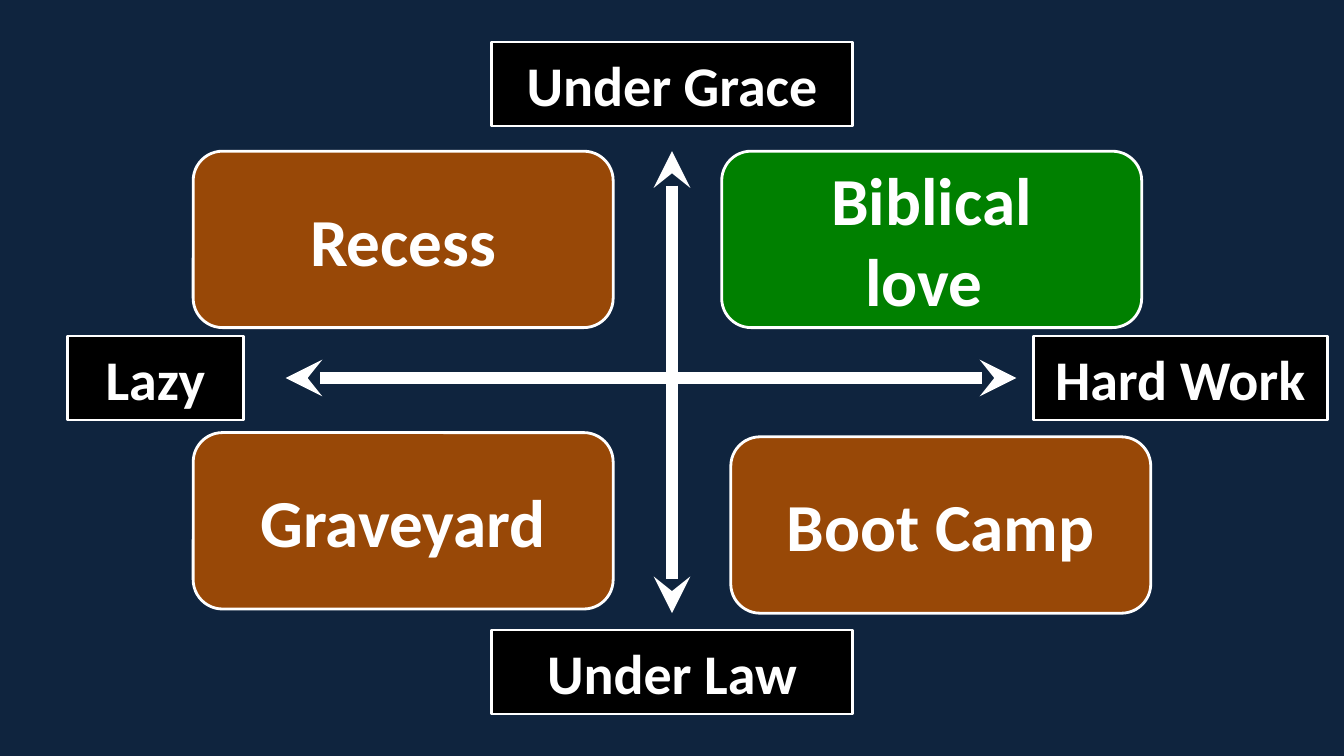
"""Build a four-quadrant slide crossing grace and law with laziness and hard work."""
from lxml import etree
from pptx import Presentation
from pptx import util as u
from pptx.dml import color
from pptx.enum import shapes, text
from pptx.oxml import ns

NAVY = color.RGBColor(0x0F, 0x24, 0x3E)
BLACK = color.RGBColor(0x00, 0x00, 0x00)
WHITE = color.RGBColor(0xFF, 0xFF, 0xFF)
BROWN = color.RGBColor(0x98, 0x48, 0x07)
GREEN = color.RGBColor(0x00, 0x80, 0x00)

LABEL_HEIGHT = 60
QUADRANT_WIDTH, QUADRANT_HEIGHT = 300, 126
CENTRE_X, CENTRE_Y = 480, 270
FONT_FORMAT = {"name": "Calibri", "bold": True}

LABELS = [
    ("Under Grace", 351, 30, 258),
    ("Under Law", 351, 450, 258),
    ("Lazy", 48, 240, 126),
    ("Hard Work", 738, 240, 210),
]
AXES = [
    (204, CENTRE_Y, 726, CENTRE_Y),
    (CENTRE_X, 108, CENTRE_X, 438),
]
QUADRANTS = [
    (["Boot Camp"], 522, 312, BROWN),
    (["Recess"], 138, 108, BROWN),
    (["Graveyard"], 138, 309, BROWN),
    (["Biblical", "love "], 515.5, 108, GREEN),
]


def apply_format(target, values):
    """Set each named attribute on the target."""
    for name, value in values.items():
        setattr(target, name, value)


def add_box(page, kind, frame, fill, lines, size):
    """Add an outlined box with centred bold text, one paragraph per line."""
    box = page.shapes.add_shape(kind, *map(u.Pt, frame))
    box.shadow.inherit = False
    box.fill.solid()
    box.fill.fore_color.rgb = fill
    box.line.color.rgb = WHITE
    box.line.width = u.Pt(2)
    apply_format(box.text_frame, {
        "word_wrap": True,
        "vertical_anchor": text.MSO_ANCHOR.MIDDLE,
    })
    for index, line in enumerate(lines):
        para = box.text_frame.paragraphs[0] if index == 0 else box.text_frame.add_paragraph()
        para.alignment = text.PP_ALIGN.CENTER
        span = para.add_run()
        span.text = line
        apply_format(span.font, {**FONT_FORMAT, "size": u.Pt(size)})
        span.font.color.rgb = WHITE


def add_label(page, caption, left, top, width):
    """Add a black label naming one end of an axis."""
    frame = (left, top, width, LABEL_HEIGHT)
    add_box(page, shapes.MSO_SHAPE.RECTANGLE, frame, BLACK, [caption], 40)


def add_quadrant(page, lines, left, top, fill):
    """Add a rounded box naming one quadrant."""
    frame = (left, top, QUADRANT_WIDTH, QUADRANT_HEIGHT)
    add_box(page, shapes.MSO_SHAPE.ROUNDED_RECTANGLE, frame, fill, lines, 48)


def add_axis(page, *ends):
    """Add a thick line with an arrowhead at both ends."""
    axis = page.shapes.add_connector(shapes.MSO_CONNECTOR.STRAIGHT, *map(u.Pt, ends))
    axis.line.color.rgb = WHITE
    axis.line.width = u.Pt(8.75)
    properties = axis.element.spPr
    outline = properties.find(ns.qn("a:ln"))
    for end in ("a:headEnd", "a:tailEnd"):
        etree.SubElement(outline, ns.qn(end), type="stealth")
    etree.SubElement(properties, ns.qn("a:effectLst"))


def main():
    """Assemble and save the deck."""
    deck = Presentation()
    apply_format(deck, {"slide_width": u.Pt(960), "slide_height": u.Pt(540)})
    page = deck.slides.add_slide(deck.slide_layouts[6])
    page.background.fill.solid()
    page.background.fill.fore_color.rgb = NAVY
    for label in LABELS:
        add_label(page, *label)
    for axis in AXES:
        add_axis(page, *axis)
    for quadrant in QUADRANTS:
        add_quadrant(page, *quadrant)
    deck.save("out.pptx")


if __name__ == "__main__":
    main()
